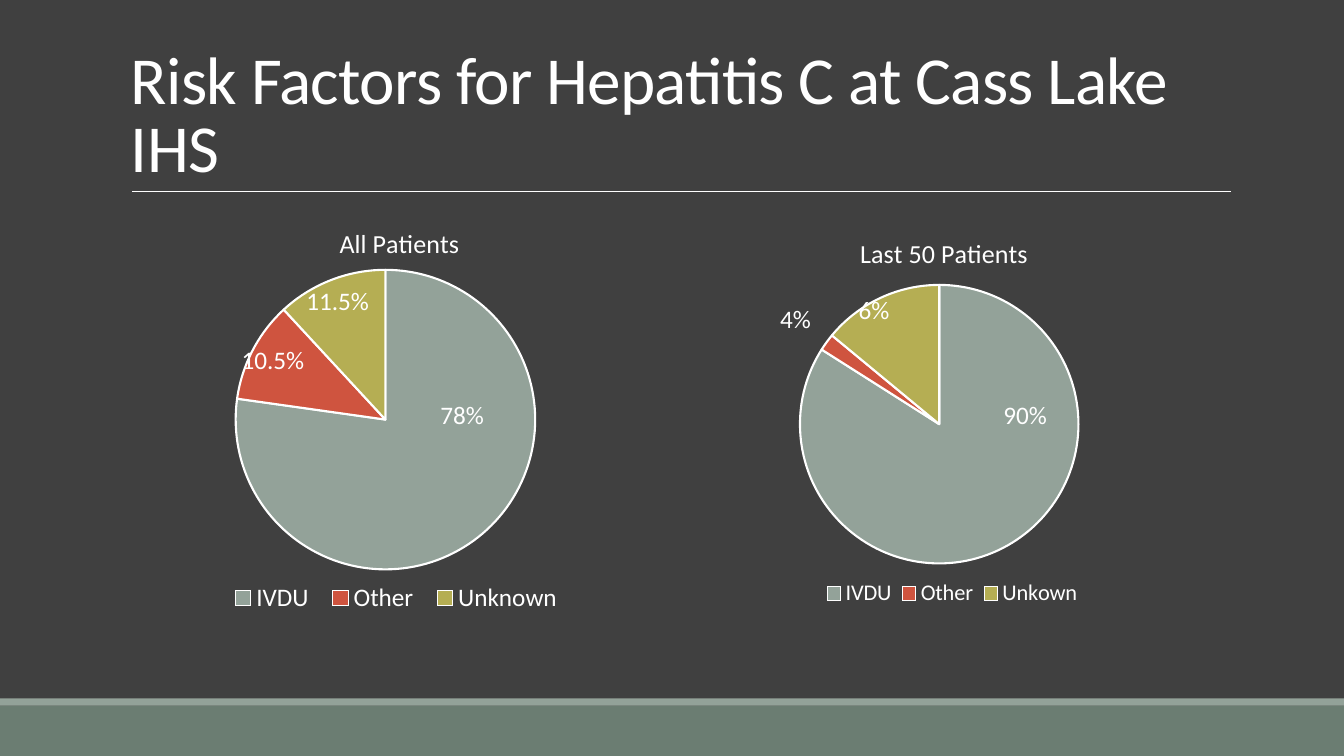
"""Build the slide on hepatitis C risk factors with its two pie charts."""
from dataclasses import dataclass

from lxml.etree import SubElement
from pptx import Presentation
from pptx.chart.data import CategoryChartData
from pptx.dml.color import RGBColor
from pptx.enum.chart import XL_CHART_TYPE, XL_LEGEND_POSITION
from pptx.enum.shapes import MSO_CONNECTOR, MSO_SHAPE
from pptx.enum.text import MSO_ANCHOR
from pptx.oxml import parse_xml
from pptx.oxml.ns import nsdecls, qn
from pptx.util import Cm, Pt

TITLE = "Risk Factors for Hepatitis C at Cass Lake IHS"
PIES = [
    {"name": "All Patients", "cats": ["IVDU", "Other", "Unknown"], "vals": [78, 11, 12],
     "box": (1.96, 4.9, 15.49, 11.02), "head": (8.44, 5.56),
     "plot": (5.94, 6.8, 7.55, 7.55), "legend": (5.54, 14.53, 8.9, 1.07), "size": 18},
    {"name": "Last 50 Patients", "cats": ["IVDU", "Other", "Unkown"], "vals": [84, 2, 14],
     "box": (16.33, 5.28, 14.68, 10.36), "head": (21.56, 5.82),
     "plot": (20.16, 7.18, 7.02, 7.02), "legend": (20.57, 14.45, 6.86, 1.02), "size": 16},
]
LABELS = [
    ("90%", 25.04, 9.93, 2.34),
    ("6%", 21.39, 7.29, 1.96),
    ("4%", 19.41, 7.52, 1.85),
    ("78%", 10.85, 9.93, 2.34),
    ("10.5%", 5.84, 8.56, 2.39),
    ("11.5%", 7.47, 7.06, 2.82),
]
WIDTH, HEIGHT = 33.87, 19.05
BANDS = [("band", 17.78, 1.27), ("trim", 17.6, 0.18)]
RULE = (3.33, 4.83, 31.01, 4.83)


@dataclass(frozen=True)
class Theme:
    """Colours, type sizes and font of the slide."""
    back: RGBColor = RGBColor(0x40, 0x40, 0x40)
    band: RGBColor = RGBColor(0x6B, 0x7D, 0x72)
    trim: RGBColor = RGBColor(0x93, 0xA2, 0x99)
    ink: RGBColor = RGBColor(0xFF, 0xFF, 0xFF)
    red: RGBColor = RGBColor(0xCF, 0x54, 0x3F)
    gold: RGBColor = RGBColor(0xB5, 0xAE, 0x53)
    font: str = "Calibri"
    title: float = 48
    head: float = 18.6
    label: float = 18
    base: float = 10


THEME = Theme()


def style(font, size):
    form = {"name": THEME.font, "size": Pt(size), "bold": False}
    for key, value in form.items():
        setattr(font, key, value)
    font.color.rgb = THEME.ink


def write(slide, text, box, size):
    frame = slide.shapes.add_textbox(*map(Cm, box)).text_frame
    frame.word_wrap = True
    run = frame.paragraphs[0].add_run()
    run.text = text
    style(run.font, size)
    return frame


def place(parent, after, box, area, inner=False):
    """Pin a chart part to a slide position given in centimetres."""
    for old in parent.findall(qn("c:layout")):
        parent.remove(old)
    layout = parse_xml(f"<c:layout {nsdecls('c')}/>")
    manual = SubElement(layout, qn("c:manualLayout"))
    left, top, wide, high = area
    parts = [("layoutTarget", "inner")] if inner else []
    parts += [("xMode", "edge"), ("yMode", "edge")]
    shares = [(box[0] - left) / wide, (box[1] - top) / high]
    if len(box) == 4:
        shares += [box[2] / wide, box[3] / high]
    parts += [(key, f"{share:.4f}") for key, share in zip("xywh", shares)]
    for key, value in parts:
        SubElement(manual, qn(f"c:{key}")).set("val", value)
    spot = parent.index(parent.find(qn(after))) + 1 if after else 0
    parent.insert(spot, layout)


def add_pie(slide, pie):
    data = CategoryChartData()
    data.categories = pie["cats"]
    data.add_series(pie["name"], pie["vals"])
    area = pie["box"]
    chart = slide.shapes.add_chart(XL_CHART_TYPE.PIE, *map(Cm, area), data).chart
    style(chart.font, THEME.base)
    chart.has_title = True
    frame = chart.chart_title.text_frame
    frame.text = pie["name"]
    style(frame.paragraphs[0].runs[0].font, THEME.head)
    chart.has_legend = True
    form = {"position": XL_LEGEND_POSITION.BOTTOM, "include_in_layout": False}
    for key, value in form.items():
        setattr(chart.legend, key, value)
    style(chart.legend.font, pie["size"])
    plot = chart.plots[0]
    plot.vary_by_categories = True
    for spot, shade in enumerate((THEME.trim, THEME.red, THEME.gold)):
        face = plot.series[0].points[spot].format
        face.fill.solid()
        face.fill.fore_color.rgb = shade
        face.line.color.rgb = THEME.ink
        face.line.width = Pt(1.5)
    root = chart._chartSpace.find(qn("c:chart"))
    place(root.find(qn("c:title")), "c:tx", pie["head"], area)
    place(root.find(qn("c:plotArea")), None, pie["plot"], area, True)
    place(root.find(qn("c:legend")), "c:legendPos", pie["legend"], area)


def main():
    deck = Presentation()
    deck.slide_width, deck.slide_height = Cm(WIDTH), Cm(HEIGHT)
    slide = deck.slides.add_slide(deck.slide_layouts[6])
    slide.background.fill.solid()
    slide.background.fill.fore_color.rgb = THEME.back

    for tone, top, high in BANDS:
        band = slide.shapes.add_shape(MSO_SHAPE.RECTANGLE, 0, Cm(top), Cm(WIDTH), Cm(high))
        band.shadow.inherit = False
        band.fill.solid()
        band.fill.fore_color.rgb = getattr(THEME, tone)
        band.line.fill.background()

    rule = slide.shapes.add_connector(MSO_CONNECTOR.STRAIGHT, *map(Cm, RULE))
    rule.line.color.rgb = THEME.ink
    rule.line.width = Pt(0.5)
    SubElement(rule._element.spPr, qn("a:effectLst"))

    title = write(slide, TITLE, (3.05, 0.79, 27.94, 4.04), THEME.title)
    title.vertical_anchor = MSO_ANCHOR.BOTTOM
    title.paragraphs[0].line_spacing = 0.85
    title.paragraphs[0].runs[0].font._element.set("spc", "-50")

    for pie in PIES:
        add_pie(slide, pie)
    for text, left, top, wide in LABELS:
        write(slide, text, (left, top, wide, 1.02), THEME.label)
    deck.save("out.pptx")


if __name__ == "__main__":
    main()
